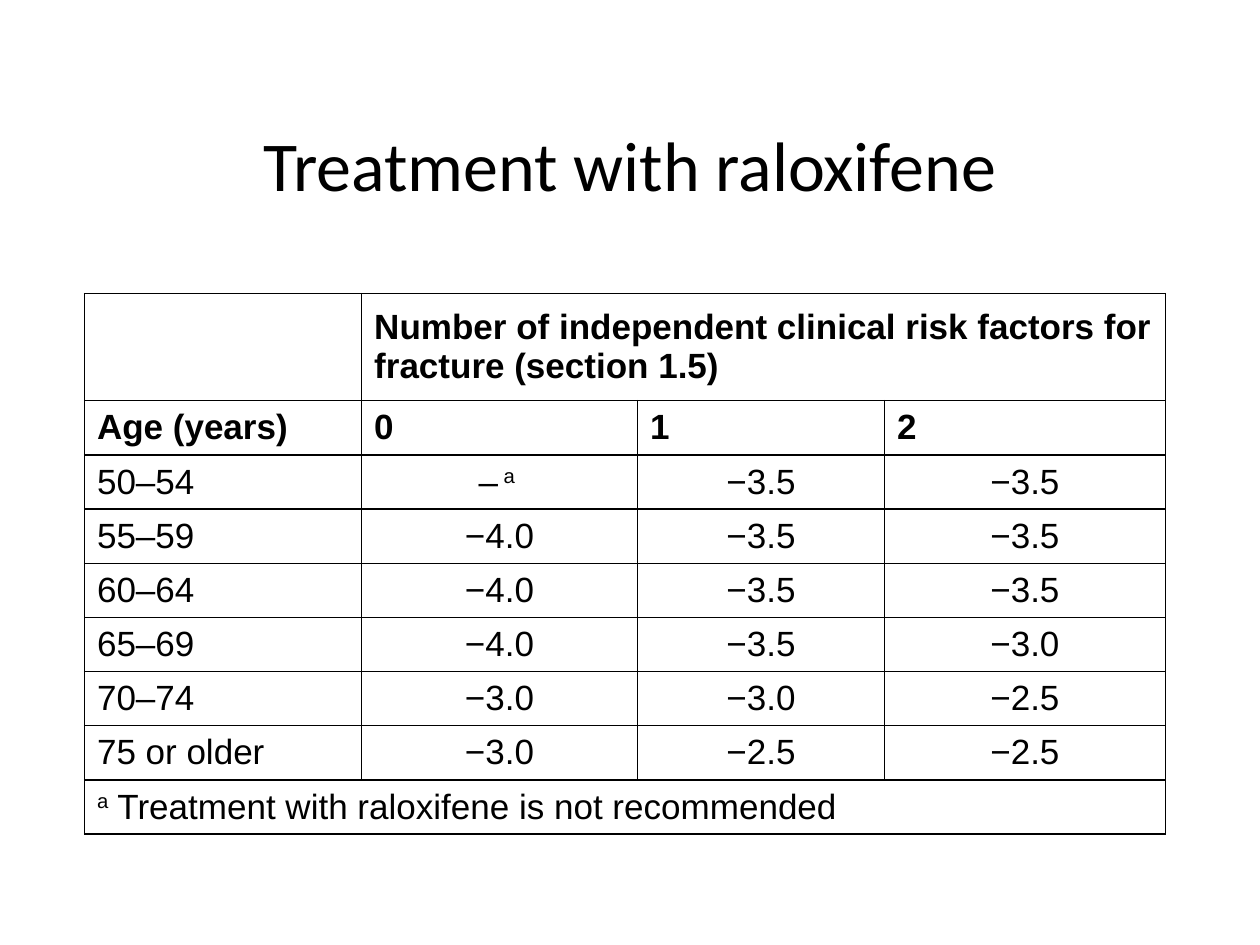
"""Build a slide with a table of T-scores for treatment with raloxifene."""
from dataclasses import dataclass

from lxml.etree import SubElement
from pptx import Presentation
from pptx.dml.color import RGBColor
from pptx.enum.text import MSO_ANCHOR, PP_ALIGN
from pptx.oxml.ns import qn
from pptx.slide import Slide
from pptx.table import Table, _Cell
from pptx.text.text import _Run
from pptx.util import Inches, Pt

COLORS = {"text": "000000", "border": "000000"}
COLUMN_WIDTHS = (2.2, 2.19, 1.96, 2.23)
HEADER_HEIGHT, ROW_HEIGHT = 0.85, 0.43
THIN, THICK = 0.75, 1


@dataclass(frozen=True)
class Span:
    text: str
    superscript: bool = False


@dataclass(frozen=True)
class Row:
    cells: tuple[str | tuple[Span, ...], ...]
    bold: bool = False
    centered: bool = False
    top: float = THIN
    bottom: float = THIN


ROWS = (
    Row(("", "Number of independent clinical risk factors for fracture (section 1.5)"),
        bold=True, top=THICK, bottom=THICK),
    Row(("Age (years)", "0", "1", "2"), bold=True, top=THICK, bottom=THICK),
    Row(("50–54", (Span("–"), Span(" a ", True)), "−3.5", "−3.5"), centered=True, top=THICK),
    Row(("55–59", "−4.0", "−3.5", "−3.5"), centered=True),
    Row(("60–64", "−4.0", "−3.5", "−3.5"), centered=True),
    Row(("65–69", "−4.0", "−3.5", "−3.0"), centered=True),
    Row(("70–74", "−3.0", "−3.0", "−2.5"), centered=True),
    Row(("75 or older", "−3.0", "−2.5", "−2.5"), centered=True, bottom=THICK),
    Row(((Span("a", True), Span(" Treatment with raloxifene is not recommended")),), top=THICK),
)


def format_run(run: _Run, font: str, size: float, bold: bool = False) -> None:
    run.font.name = font
    run.font.size = Pt(size)
    run.font.bold = bold
    run.font.color.rgb = RGBColor.from_string(COLORS["text"])


def set_borders(cell: _Cell, top: float, bottom: float) -> None:
    properties = cell._tc.get_or_add_tcPr()
    for side, width in (("L", THIN), ("R", THIN), ("T", top), ("B", bottom)):
        line = SubElement(properties, qn(f"a:ln{side}"), w=str(Pt(width)))
        fill = SubElement(line, qn("a:solidFill"))
        SubElement(fill, qn("a:srgbClr"), val=COLORS["border"])


def write_cell(cell: _Cell, content: str | tuple[Span, ...], bold: bool, centered: bool) -> None:
    paragraph = cell.text_frame.paragraphs[0]
    paragraph.alignment = PP_ALIGN.CENTER if centered else PP_ALIGN.LEFT
    for span in (Span(content),) if isinstance(content, str) else content:
        run = paragraph.add_run()
        run.text = span.text
        format_run(run, "Arial", 20, bold)
        if span.superscript:
            run._r.get_or_add_rPr().set("baseline", "30000")


def fill_row(table: Table, index: int, row: Row) -> None:
    last_column = len(COLUMN_WIDTHS) - 1
    for column in range(len(COLUMN_WIDTHS)):
        cell = table.cell(index, column)
        set_borders(cell, row.top, row.bottom)
        cell.fill.background()
        cell.vertical_anchor = MSO_ANCHOR.MIDDLE
    last_filled = len(row.cells) - 1
    if last_filled < last_column:
        table.cell(index, last_filled).merge(table.cell(index, last_column))
    for column, content in enumerate(row.cells):
        if content:
            write_cell(table.cell(index, column), content, row.bold, row.centered and column > 0)


def add_title(page: Slide, text: str) -> None:
    title = page.shapes.title
    title.left, title.top = Inches(0.75), Inches(0.67)
    title.width, title.height = Inches(8.5), Inches(1.25)
    title.text_frame.text = text
    title.text_frame.vertical_anchor = MSO_ANCHOR.MIDDLE
    paragraph = title.text_frame.paragraphs[0]
    paragraph.alignment = PP_ALIGN.CENTER
    format_run(paragraph.runs[0], "Calibri", 40)


def add_score_table(page: Slide) -> None:
    heights = [HEADER_HEIGHT] + [ROW_HEIGHT] * (len(ROWS) - 1)
    table = page.shapes.add_table(
        len(ROWS), len(COLUMN_WIDTHS), Inches(0.67), Inches(2.33),
        Inches(sum(COLUMN_WIDTHS)), Inches(sum(heights)),
    ).table
    table.first_row = table.horz_banding = False
    for column, width in zip(table.columns, COLUMN_WIDTHS):
        column.width = Inches(width)
    for index, (row, height) in enumerate(zip(ROWS, heights)):
        table.rows[index].height = Inches(height)
        fill_row(table, index, row)


def main() -> None:
    deck = Presentation()
    deck.slide_width, deck.slide_height = Inches(10), Inches(7.5)
    page = deck.slides.add_slide(deck.slide_layouts.get_by_name("Title Only"))
    add_title(page, "Treatment with raloxifene")
    add_score_table(page)
    deck.save("out.pptx")


if __name__ == "__main__":
    main()
